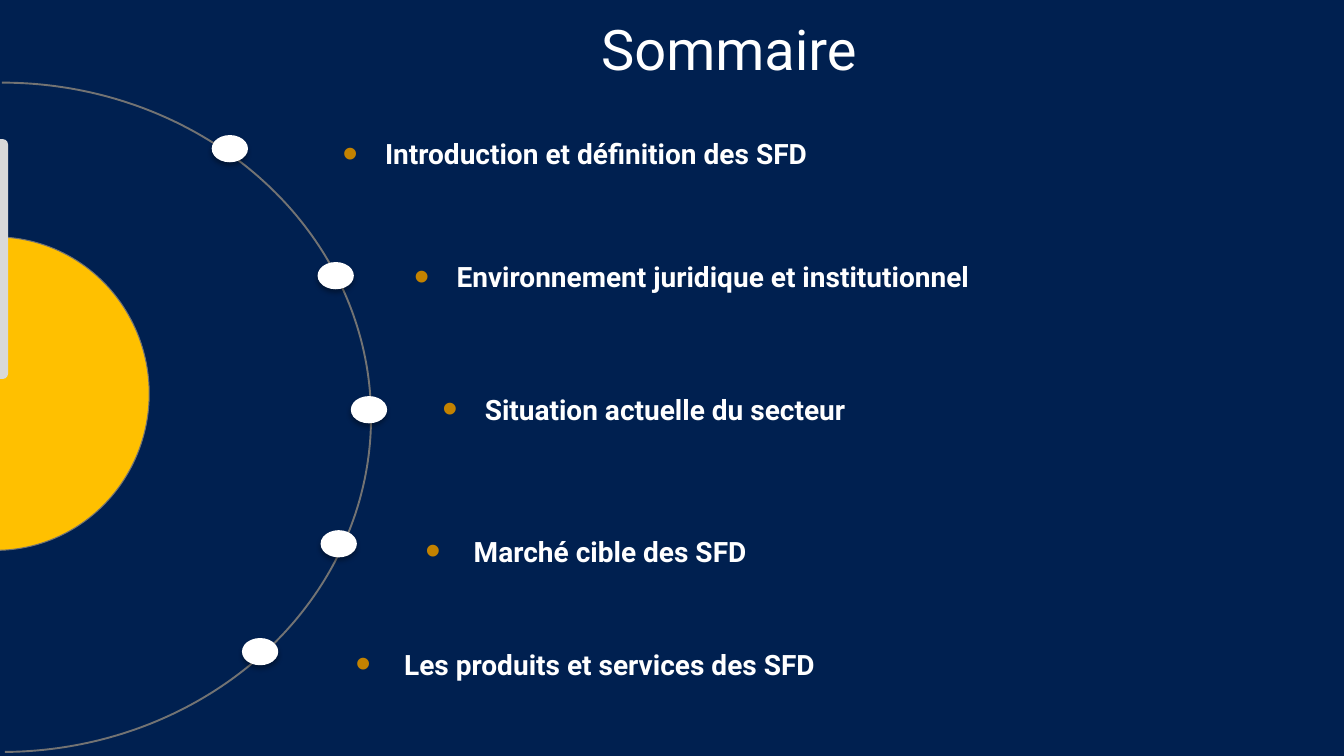
import pptx
import pptx.dml.color
import pptx.enum.shapes
import pptx.enum.text
import pptx.oxml
import pptx.oxml.ns
import pptx.util
from lxml import etree

Inches, Pt = pptx.util.Inches, pptx.util.Pt
RGBColor = pptx.dml.color.RGBColor
SHAPES = pptx.enum.shapes.MSO_SHAPE
qn = pptx.oxml.ns.qn

NAVY = RGBColor(0x00, 0x20, 0x50)
WHITE = RGBColor(0xFF, 0xFF, 0xFF)
GOLD = RGBColor(0xFF, 0xC0, 0x00)
GREY = RGBColor(0x73, 0x73, 0x73)
PALE_GREY = RGBColor(0xD9, 0xD9, 0xD9)
BULLET = RGBColor(0xC3, 0x82, 0x00)
FONT = "Roboto"

# Marker position, text box, level, text margin and hanging indent, wording
TOPICS = [
    ((2.1, 1.34), (3.04, 1.31, 5.71, 0.44), 1, 0.68, 0.42,
     "Introduction et définition des SFD"),
    ((3.15, 2.6), (3.75, 2.53, 6.85, 0.44), 1, 0.68, 0.42,
     "Environnement juridique et institutionnel"),
    ((3.48, 3.93), (4.03, 3.84, 6.58, 0.44), 1, 0.68, 0.42,
     "Situation actuelle du secteur"),
    ((3.18, 5.26), (4.12, 5.25, 6.31, 0.44), 0, 0.48, 0.48,
     "Marché cible des SFD"),
    ((2.4, 6.33), (3.43, 6.37, 6.66, 0.44), 0, 0.48, 0.48,
     "Les produits et services des SFD"),
]


def add_shape(slide, kind, box, fill=None, line=None, line_width=0.75):
    shape = slide.shapes.add_shape(kind, *map(Inches, box))
    shape.shadow.inherit = False
    if fill is None:
        shape.fill.background()
    else:
        shape.fill.solid()
        shape.fill.fore_color.rgb = fill
    if line is None:
        shape.line.fill.background()
    else:
        shape.line.color.rgb = line
        shape.line.width = Pt(line_width)
    return shape


def add_half_ring(slide, box, end, **style):
    """Arc over the right half of the ellipse in the box, from its top."""
    ring = add_shape(slide, SHAPES.ARC, box, line=GREY, **style)
    ring.adjustments[0] = 162
    ring.adjustments[1] = end


def cast_shadow(shape, opacity, blur, distance, angle):
    effects = shape._element.spPr.find(qn("a:effectLst"))
    shadow = etree.SubElement(
        effects, qn("a:outerShdw"), blurRad=str(Pt(blur)),
        dist=str(Pt(distance)), dir=str(angle * 60000),
        algn="ctr", rotWithShape="0")
    black = etree.SubElement(shadow, qn("a:srgbClr"), val="000000")
    etree.SubElement(black, qn("a:alpha"), val=str(opacity * 1000))


def add_text(slide, box, text, size, bold=False):
    frame = slide.shapes.add_textbox(*map(Inches, box)).text_frame
    frame.word_wrap = True
    frame.auto_size = pptx.enum.text.MSO_AUTO_SIZE.SHAPE_TO_FIT_TEXT
    frame.text = text
    paragraph = frame.paragraphs[0]
    font = paragraph.runs[0].font
    font.name, font.size, font.bold = FONT, Pt(size), bold
    font.color.rgb = WHITE
    return paragraph


def add_bullet(paragraph, margin, hanging):
    properties = paragraph._p.get_or_add_pPr()
    properties.set("marL", str(Inches(margin)))
    properties.set("indent", str(-Inches(hanging)))
    color = etree.SubElement(properties, qn("a:buClr"))
    etree.SubElement(color, qn("a:srgbClr"), val=str(BULLET))
    etree.SubElement(properties, qn("a:buSzPct"), val="155000")
    etree.SubElement(properties, qn("a:buFont"), typeface="Arial")
    etree.SubElement(properties, qn("a:buChar"), char="•")


def add_emblem(slide):
    """Large ring, gold half disc and panel on the left edge."""
    add_half_ring(slide, (-3.64, 0.82, 7.32, 6.64), 53.71, line_width=1.35)
    add_half_ring(slide, (-1.57, 2.35, 3.05, 3.11), 53.6, fill=GOLD)
    panel = add_shape(slide, SHAPES.ROUNDED_RECTANGLE,
                      (-0.07, 1.38, 0.15, 2.38), PALE_GREY)
    panel.adjustments[0] = 0.35
    cast_shadow(panel, 18, 14.5, 19, 192)


def add_topic(slide, marker_at, box, level, margin, hanging, text):
    marker = add_shape(slide, SHAPES.OVAL, (*marker_at, 0.36, 0.27), WHITE)
    cast_shadow(marker, 32, 3.5, 2.2, 90)
    topic = add_text(slide, box, text, 20, bold=True)
    topic.level = level
    add_bullet(topic, margin, hanging)


def main():
    deck = pptx.Presentation()
    deck.slide_width, deck.slide_height = Inches(13.33), Inches(7.5)
    slide = deck.slides.add_slide(deck.slide_layouts[6])
    slide.background.fill.solid()
    slide.background.fill.fore_color.rgb = NAVY
    add_emblem(slide)
    title = add_text(slide, (4.83, 0.09, 4.8, 0.77), "Sommaire", 40)
    title.alignment = pptx.enum.text.PP_ALIGN.CENTER
    for topic in TOPICS:
        add_topic(slide, *topic)
    deck.save("out.pptx")


if __name__ == "__main__":
    main()
